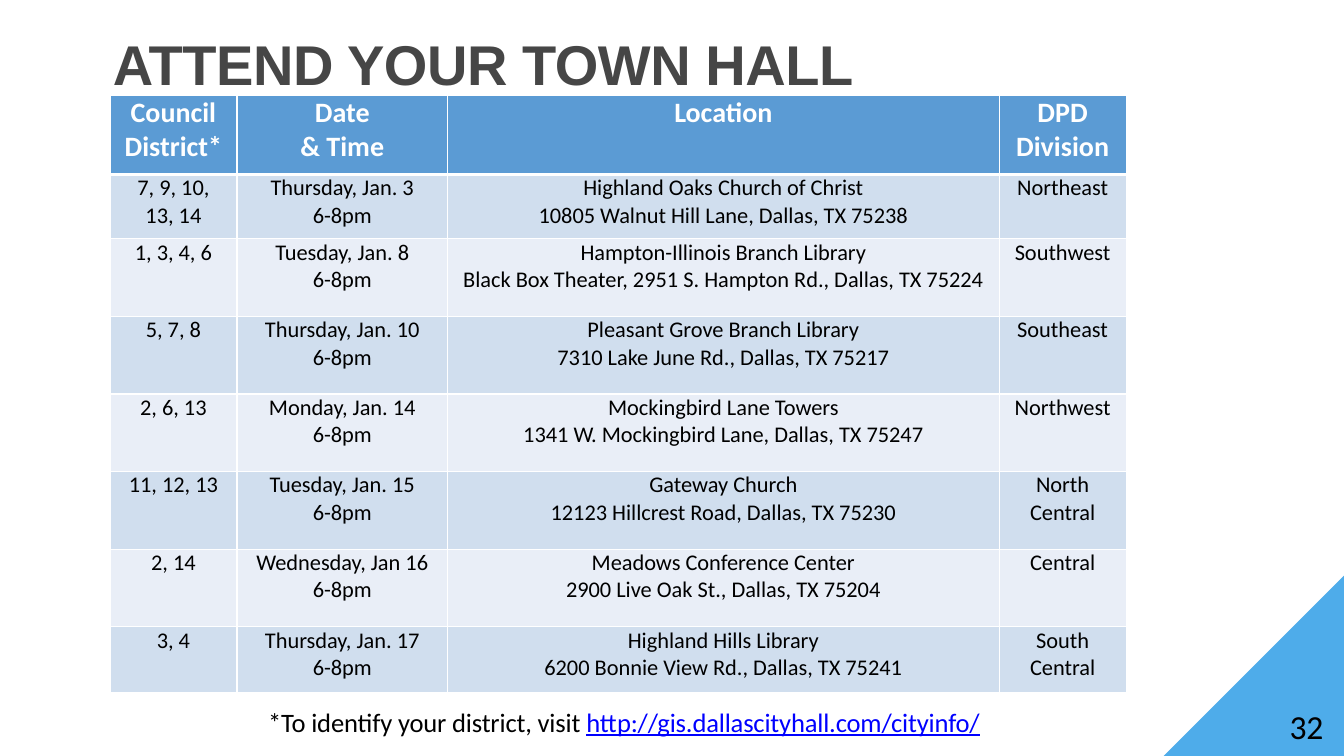
from pptx import Presentation
from pptx.dml.color import RGBColor
from pptx.enum.text import MSO_ANCHOR, MSO_AUTO_SIZE, PP_ALIGN
from pptx.oxml import parse_xml
from pptx.oxml.ns import nsdecls
from pptx.util import Inches, Pt

WHITE, BLACK, GRAY = "FFFFFF", "000000", "464646"
SKY, HEADER_BLUE, LINK_BLUE = "4EACEA", "5B9BD4", "0000FF"
BANDS = ("D0DEEE", "E9EEF7")

COLUMN_WIDTHS = (1.26, 2.09, 5.47, 1.26)
ROW_HEIGHTS = (0.78, 0.64, 0.77, 0.77, 0.77, 0.77, 0.77, 0.65)
HEADINGS = ("Council\nDistrict*", "Date\n& Time", "Location", "DPD\nDivision")
MEETINGS = (
    ("7, 9, 10,\n13, 14", "Thursday, Jan. 3",
     "Highland Oaks Church of Christ\n10805 Walnut Hill Lane, Dallas, TX 75238", "Northeast"),
    ("1, 3, 4, 6", "Tuesday, Jan. 8",
     "Hampton-Illinois Branch Library\n"
     "Black Box Theater, 2951 S. Hampton Rd., Dallas, TX 75224", "Southwest"),
    ("5, 7, 8", "Thursday, Jan. 10",
     "Pleasant Grove Branch Library\n7310 Lake June Rd., Dallas, TX 75217", "Southeast"),
    ("2, 6, 13", "Monday, Jan. 14",
     "Mockingbird Lane Towers\n1341 W. Mockingbird Lane, Dallas, TX 75247", "Northwest"),
    ("11, 12, 13", "Tuesday, Jan. 15",
     "Gateway Church\n12123 Hillcrest Road, Dallas, TX 75230", "North\nCentral"),
    ("2, 14", "Wednesday, Jan 16",
     "Meadows Conference Center\n2900 Live Oak St., Dallas, TX 75204", "Central"),
    ("3, 4", "Thursday, Jan. 17",
     "Highland Hills Library\n6200 Bonnie View Rd., Dallas, TX 75241", "South\nCentral"),
)


def color(value):
    """Turn a hex string into a colour."""
    return RGBColor.from_string(value)


def style_run(run, size, ink, bold=False, face="Calibri", tracking=0):
    """Set the font of a run, with tracking in points."""
    run.font.name = face
    run.font.size = Pt(size)
    run.font.bold = bold
    run.font.color.rgb = color(ink)
    if tracking:
        run.font._element.set("spc", str(round(tracking * 100)))


def set_frame(frame, left=0, top=0):
    """Anchor a text frame at its top with the given insets."""
    frame.word_wrap = True
    frame.auto_size = MSO_AUTO_SIZE.NONE
    frame.vertical_anchor = MSO_ANCHOR.TOP
    frame.margin_left, frame.margin_top = Inches(left), Inches(top)
    frame.margin_right = frame.margin_bottom = 0


def add_corner(slide, left, top, side):
    """Draw the triangle that fills the lower right corner of a square box."""
    right, bottom = left + side, top + side
    outline = slide.shapes.build_freeform(Inches(right), Inches(top))
    outline.add_line_segments(
        [(Inches(left), Inches(bottom)), (Inches(right), Inches(bottom))], close=True)
    corner = outline.convert_to_shape()
    corner.shadow.inherit = False
    corner.fill.solid()
    corner.fill.fore_color.rgb = color(SKY)
    corner.line.fill.background()


def set_title(slide, left, top, width, height):
    """Place and format the title."""
    title = slide.shapes.title
    title.left, title.top = Inches(left), Inches(top)
    title.width, title.height = Inches(width), Inches(height)
    set_frame(title.text_frame, left=0.38, top=0.18)
    title.text_frame.text = "ATTEND YOUR TOWN HALL"
    heading = title.text_frame.paragraphs[0]
    heading.alignment = PP_ALIGN.LEFT
    style_run(heading.runs[0], 40, GRAY, bold=True, face="Arial", tracking=-0.3)


def fill_cell(cell, text, background, size, ink, bold, edges):
    """Write centred lines in a cell and set its borders and fill."""
    cell.margin_left = cell.margin_right = cell.margin_top = cell.margin_bottom = 0
    cell.vertical_anchor = MSO_ANCHOR.TOP
    cell.text_frame.text = text
    for line in cell.text_frame.paragraphs:
        line.alignment = PP_ALIGN.CENTER
        style_run(line.runs[0], size, ink, bold)
    properties = cell._tc.get_or_add_tcPr()
    for side, weight in zip("LRTB", edges):
        properties.append(parse_xml(
            f'<a:ln{side} {nsdecls("a")} w="{Pt(weight)}"><a:solidFill>'
            f'<a:srgbClr val="{WHITE}"/></a:solidFill></a:ln{side}>'))
    cell.fill.solid()
    cell.fill.fore_color.rgb = color(background)


def add_schedule(slide, left, top):
    """Build the table of town hall meetings."""
    schedule = slide.shapes.add_table(
        len(ROW_HEIGHTS), len(COLUMN_WIDTHS), Inches(left), Inches(top),
        Inches(sum(COLUMN_WIDTHS)), Inches(sum(ROW_HEIGHTS))).table
    for column, width in zip(schedule.columns, COLUMN_WIDTHS):
        column.width = Inches(width)
    for row, height in zip(schedule.rows, ROW_HEIGHTS):
        row.height = Inches(height)
    for cell, heading in zip(schedule.rows[0].cells, HEADINGS):
        fill_cell(cell, heading, HEADER_BLUE, 20, WHITE, True, (1, 1, 1, 3))
    for number, (districts, date, location, division) in enumerate(MEETINGS):
        entries = (districts, f"{date}\n6-8pm", location, division)
        edges = (1, 1, 1 if number else 3, 1)
        for cell, entry in zip(schedule.rows[number + 1].cells, entries):
            fill_cell(cell, entry, BANDS[number % 2], 16, BLACK, False, edges)


def add_line(slide, left, top, width, height, inset):
    """Add an empty text box and return its paragraph."""
    box = slide.shapes.add_textbox(Inches(left), Inches(top), Inches(width), Inches(height))
    set_frame(box.text_frame, left=inset)
    return box.text_frame.paragraphs[0]


def add_footnote(slide, left, top, width, height):
    """Add the note on finding a district."""
    note = add_line(slide, left, top, width, height, 0.01)
    for text, ink in (("*To identify your district, visit ", BLACK),
                      ("http://gis.dallascityhall.com/cityinfo/", LINK_BLUE)):
        run = note.add_run()
        run.text = text
        style_run(run, 19, ink, tracking=-0.1)
        run.font.underline = ink == LINK_BLUE


def add_page_number(slide, left, top, width, height):
    """Add the page number over the corner."""
    page = add_line(slide, left, top, width, height, 0.03)
    page.text = "32"
    style_run(page.runs[0], 24, BLACK, tracking=-0.1)


def main():
    """Build and save the slide."""
    deck = Presentation()
    deck.slide_width, deck.slide_height = Inches(13.33), Inches(7.5)
    slide = deck.slides.add_slide(deck.slide_layouts[5])
    add_corner(slide, 11.54, 5.71, 1.79)
    set_title(slide, 0.74, 0.11, 11.85, 1.07)
    add_footnote(slide, 2.65, 7, 7.26, 0.29)
    add_page_number(slide, 12.76, 7, 0.42, 0.39)
    add_schedule(slide, 1.09, 0.95)
    deck.save("out.pptx")


if __name__ == "__main__":
    main()
